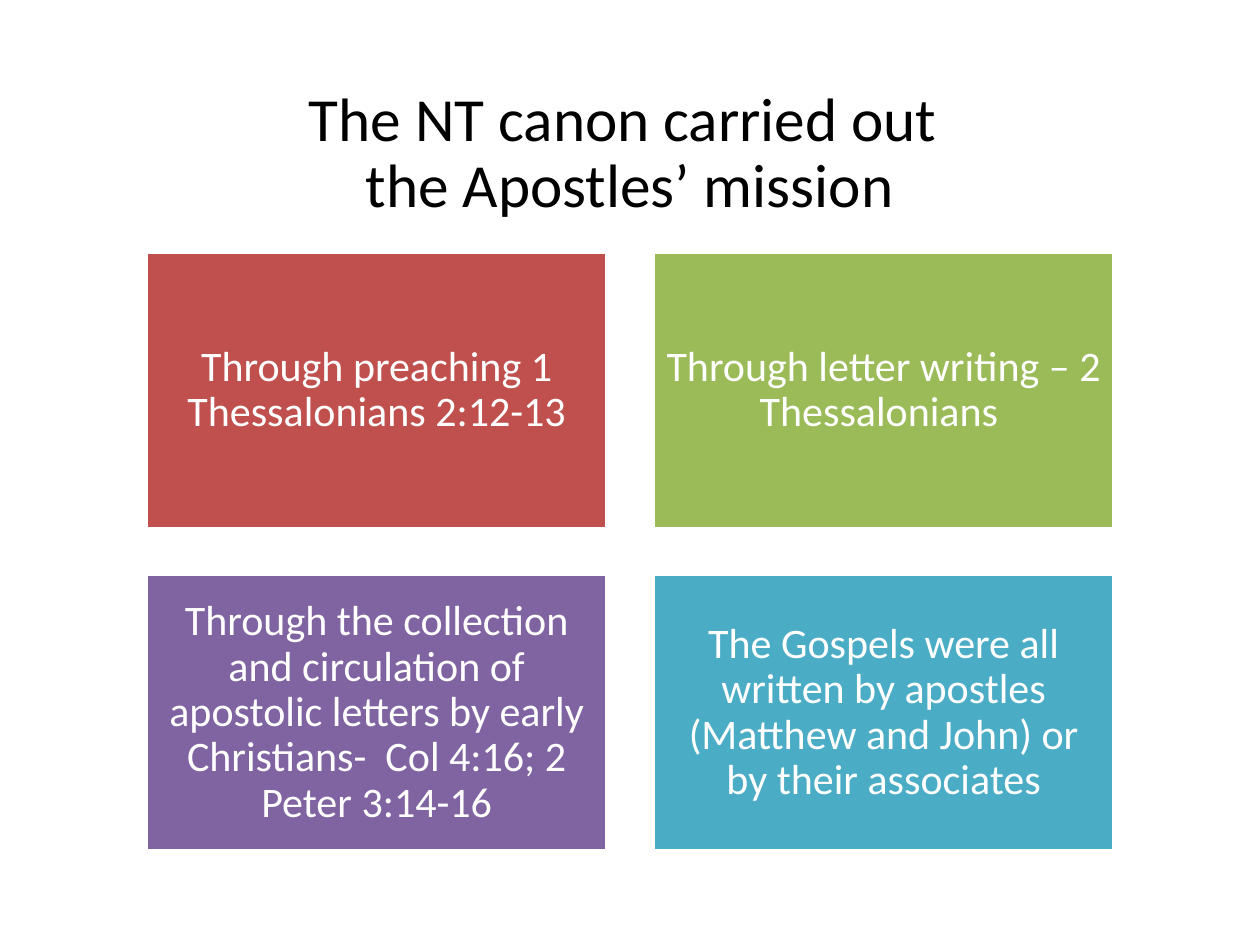
from pptx import Presentation
from pptx.dml.color import RGBColor
from pptx.enum.shapes import MSO_SHAPE as Shape
from pptx.enum.text import MSO_ANCHOR as Anchor, MSO_AUTO_SIZE as AutoSize, PP_ALIGN as Align
from pptx.util import Pt


def rgb(value):
    return RGBColor.from_string(value)


class MissionSlide:
    font = "Calibri"
    inset = 7.2
    line_spacing = 0.9

    def __init__(self, deck):
        self.slide = deck.slides.add_slide(deck.slide_layouts[5])  # title only

    def set_text(self, frame, text, size, color, inset):
        frame.text = text
        frame_format = {
            "word_wrap": True,
            "auto_size": AutoSize.NONE,
            "vertical_anchor": Anchor.MIDDLE,
            **{f"margin_{side}": Pt(inset) for side in ("left", "top", "right", "bottom")},
        }
        for name, value in frame_format.items():
            setattr(frame, name, value)
        paragraph = frame.paragraphs[0]
        paragraph.alignment = Align.CENTER
        paragraph.line_spacing = self.line_spacing
        for run in paragraph.runs:
            for name, value in {"name": self.font, "size": Pt(size), "bold": False}.items():
                setattr(run.font, name, value)
            run.font.color.rgb = rgb(color)

    def title(self, text, left, top, width, height):
        heading = self.slide.shapes.title
        place = {"left": left, "top": top, "width": width, "height": height}
        for name, value in place.items():
            setattr(heading, name, Pt(value))
        self.set_text(heading.text_frame, text, 35, "000000", 3.6)

    def card(self, text, fill, left, top, width, height):
        card = self.slide.shapes.add_shape(
            Shape.RECTANGLE, Pt(left), Pt(top), Pt(width), Pt(height))
        card.shadow.inherit = False
        card.fill.solid()
        card.fill.fore_color.rgb = rgb(fill)
        card.line.color.rgb = rgb("FFFFFF")
        card.line.width = Pt(2)
        self.set_text(card.text_frame, text, 24, "FFFFFF", self.inset)


def main():
    deck = Presentation()
    deck.slide_width, deck.slide_height = Pt(720), Pt(540)
    mission = MissionSlide(deck)

    # Heading
    mission.title("The NT canon carried out \vthe Apostles’ mission", 49.5, 44, 621, 89)

    # Two-by-two grid of ways the mission was carried out
    ways = [
        ("Through preaching 1 Thessalonians 2:12-13", "C0504D"),
        ("Through letter writing – 2 Thessalonians ", "9BBB59"),
        ("Through the collection and circulation of apostolic letters by early "
         "Christians-  Col 4:16; 2 Peter 3:14-16", "8064A2"),
        ("The Gospels were all written by apostles (Matthew and John) or "
         "by their associates", "4BACC6"),
    ]
    left, top, width, height, gap = 83.5, 144, 263.5, 158.1, 26.2
    for index, (way, fill) in enumerate(ways):
        row, column = divmod(index, 2)
        mission.card(way, fill, left + column * (width + gap),
                     top + row * (height + gap), width, height)

    deck.save("out.pptx")


if __name__ == "__main__":
    main()
